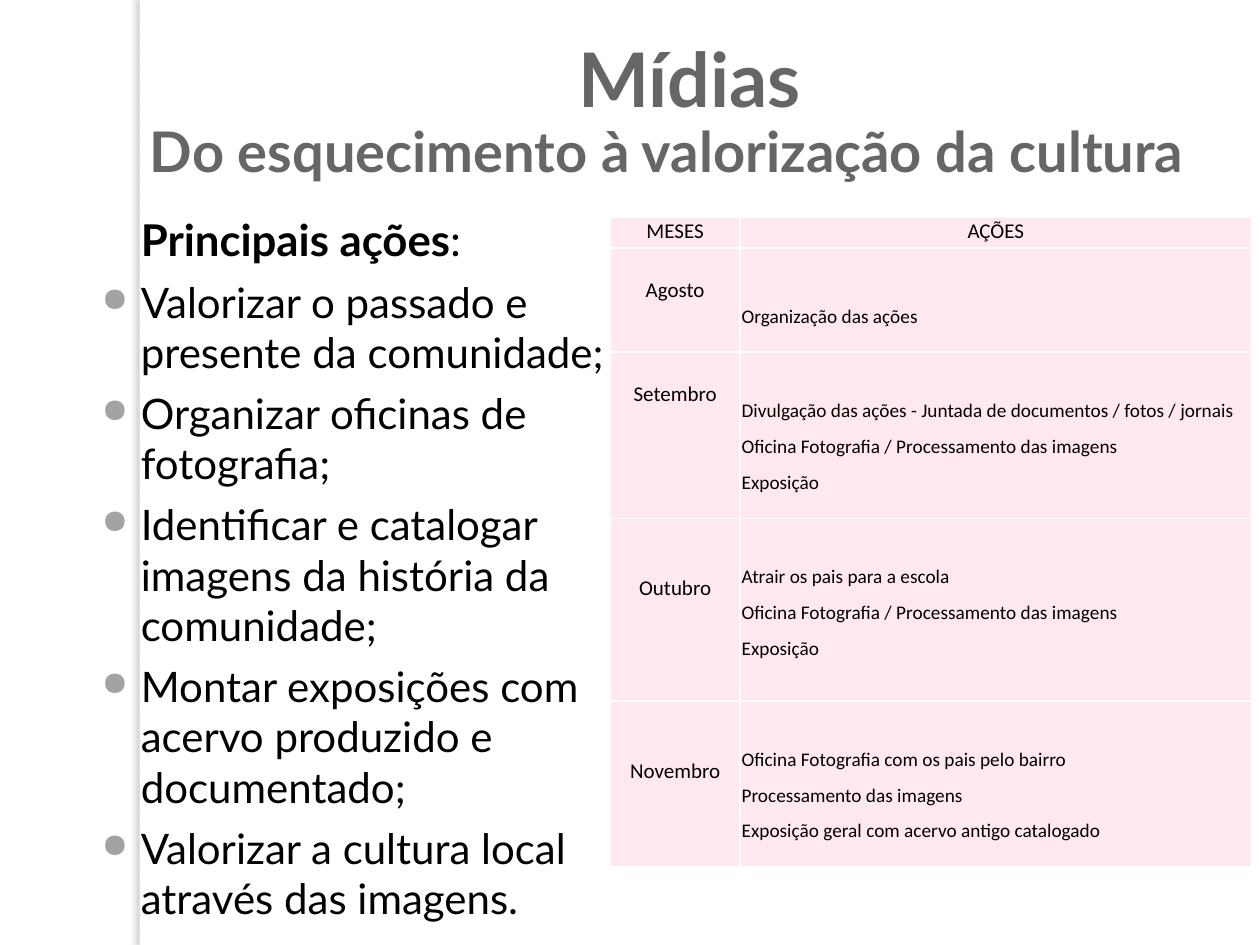
from lxml.etree import SubElement
from pptx import Presentation
from pptx.dml.color import RGBColor
from pptx.enum.shapes import MSO_SHAPE as Preset
from pptx.enum.text import MSO_ANCHOR as Anchor, PP_ALIGN as Align
from pptx.oxml import parse_xml
from pptx.oxml.ns import nsdecls, qn
from pptx.util import Cm, Pt

ACTIONS = [
    "Valorizar o passado e presente da comunidade;",
    "Organizar oficinas de fotografia;",
    "Identificar e catalogar imagens da história da comunidade;",
    "Montar exposições com acervo produzido e documentado;",
    "Valorizar a cultura local através das imagens.",
]
WORKSHOP = "Oficina Fotografia / Processamento das imagens"
# month, month offset, tasks, task offset, row height
SCHEDULE = [
    ("MESES", 0, ["AÇÕES"], 0, 0.63),
    ("Agosto", 0.56, ["Organização das ações"], 0.91, 2.1),
    ("Setembro", 0.56,
     ["Divulgação das ações - Juntada de documentos / fotos / jornais",
      WORKSHOP, "Exposição"], 0.71, 3.35),
    ("Outubro", 1.12,
     ["Atrair os pais para a escola", WORKSHOP, "Exposição"], 0.71, 3.68),
    ("Novembro", 1.12,
     ["Oficina Fotografia com os pais pelo bairro", "Processamento das imagens",
      "Exposição geral com acervo antigo catalogado"], 0.71, 3.35),
]


def color(value):
    return RGBColor.from_string(value)


def style(span, name, size, value, bold=False):
    span.font.name = name
    span.font.size = Pt(size)
    span.font.bold = bold
    span.font.color.rgb = color(value)


def add_frame(page, left, top, width, height):
    box = page.shapes.add_textbox(Cm(left), Cm(top), Cm(width), Cm(height))
    box.text_frame.word_wrap = True
    return box.text_frame


def add_edge(page, left, top, width, height):
    edge = page.shapes.add_shape(
        Preset.RECTANGLE, Cm(left), Cm(top), Cm(width), Cm(height))
    edge.fill.solid()
    edge.fill.fore_color.rgb = color("FFFFFF")
    edge.line.fill.background()
    edge.shadow.inherit = False
    effects = edge._element.spPr.find(qn("a:effectLst"))
    shadow = SubElement(effects, qn("a:outerShdw"), blurRad=str(Pt(3)),
                        dist=str(Pt(3)), dir="10800000", rotWithShape="0")
    tone = SubElement(shadow, qn("a:srgbClr"), val="686868")
    SubElement(tone, qn("a:alpha"), val="25000")


def add_title(page, left, top, width, height):
    frame = add_frame(page, left, top, width, height)
    frame.vertical_anchor = Anchor.MIDDLE
    frame.text = "Mídias \nDo esquecimento à valorização da cultura"
    looks = [(Align.CENTER, 43), (Align.JUSTIFY, 32)]
    for para, (align, size) in zip(frame.paragraphs, looks):
        para.alignment = align
        para.line_spacing = 0.9
        style(para.runs[0], "Lato", size, "666666", True)


def add_bullet(props):
    props.set("indent", str(-Cm(0.79)))
    tint = SubElement(props, qn("a:buClr"))
    SubElement(tint, qn("a:srgbClr"), val="A3A3A3")
    SubElement(props, qn("a:buSzPct"), val="80000")
    SubElement(props, qn("a:buChar"), char="●")


def add_actions(page, left, top, width, height):
    frame = add_frame(page, left, top, width, height)
    frame.text = "\n".join(["Principais ações"] + ACTIONS)
    heading, *items = frame.paragraphs
    heading.add_run().text = ":"
    for span, bold in zip(heading.runs, (True, False)):
        style(span, "Lato", 25, "000000", bold)
    for para in frame.paragraphs:
        para.space_before = Pt(6)
        para._p.get_or_add_pPr().set("marL", str(Cm(1.02)))
    for para in items:
        style(para.runs[0], "Lato", 24, "000000")
        add_bullet(para._p.get_or_add_pPr())


def add_borders(cell):
    props = cell._tc.get_or_add_tcPr()
    for place, side in enumerate(("lnL", "lnR", "lnT", "lnB")):
        props.insert(place, parse_xml(
            f'<a:{side} {nsdecls("a")} w="{Pt(1)}"><a:solidFill>'
            f'<a:srgbClr val="FFFFFF"/></a:solidFill></a:{side}>'))


def fill_cell(cell, lines, offset, size, align, spacing):
    cell.margin_left = cell.margin_right = Cm(0.03)
    cell.margin_top, cell.margin_bottom = Cm(offset), 0
    cell.fill.solid()
    cell.fill.fore_color.rgb = color("FFE8EE")
    add_borders(cell)
    cell.text_frame.text = "\n".join(lines)
    for para in cell.text_frame.paragraphs:
        para.alignment = align
        para.line_spacing = spacing
        style(para.runs[0], "Calibri", size, "000000")


def add_schedule(page, left, top, width, height):
    table = page.shapes.add_table(
        len(SCHEDULE), 2, Cm(left), Cm(top), Cm(width), Cm(height)).table
    month_width = 2.62
    table.columns[0].width = Cm(month_width)
    table.columns[1].width = Cm(width - month_width)
    for index, (month, drop, tasks, task_drop, row_height) in enumerate(SCHEDULE):
        table.rows[index].height = Cm(row_height)
        centred = (12, Align.CENTER, 1.07)
        fill_cell(table.cell(index, 0), [month], drop, *centred)
        look = (11, Align.LEFT, 1.5) if index else centred
        fill_cell(table.cell(index, 1), tasks, task_drop, *look)


def main():
    deck = Presentation()
    deck.slide_width, deck.slide_height = Cm(25.4), Cm(19.05)
    page = deck.slides.add_slide(deck.slide_layouts[6])
    add_edge(page, 2.82, 0, 0.2, 19.05)
    add_title(page, 2.77, 0, 22.63, 4.57)
    add_actions(page, 1.57, 4.17, 11.13, 14.88)
    add_schedule(page, 12.3, 4.37, 12.93, 13.11)
    deck.save("out.pptx")


if __name__ == "__main__":
    main()
